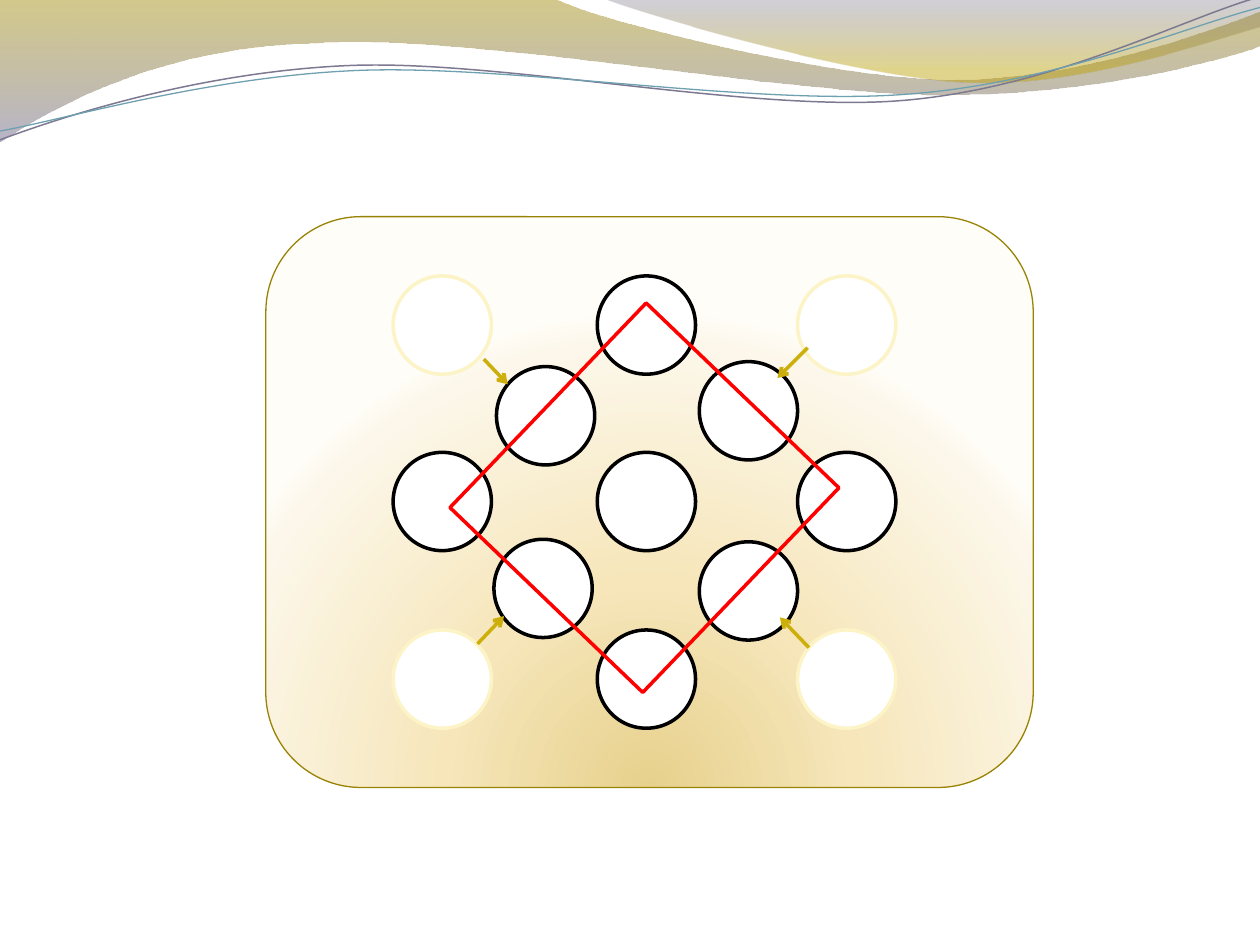
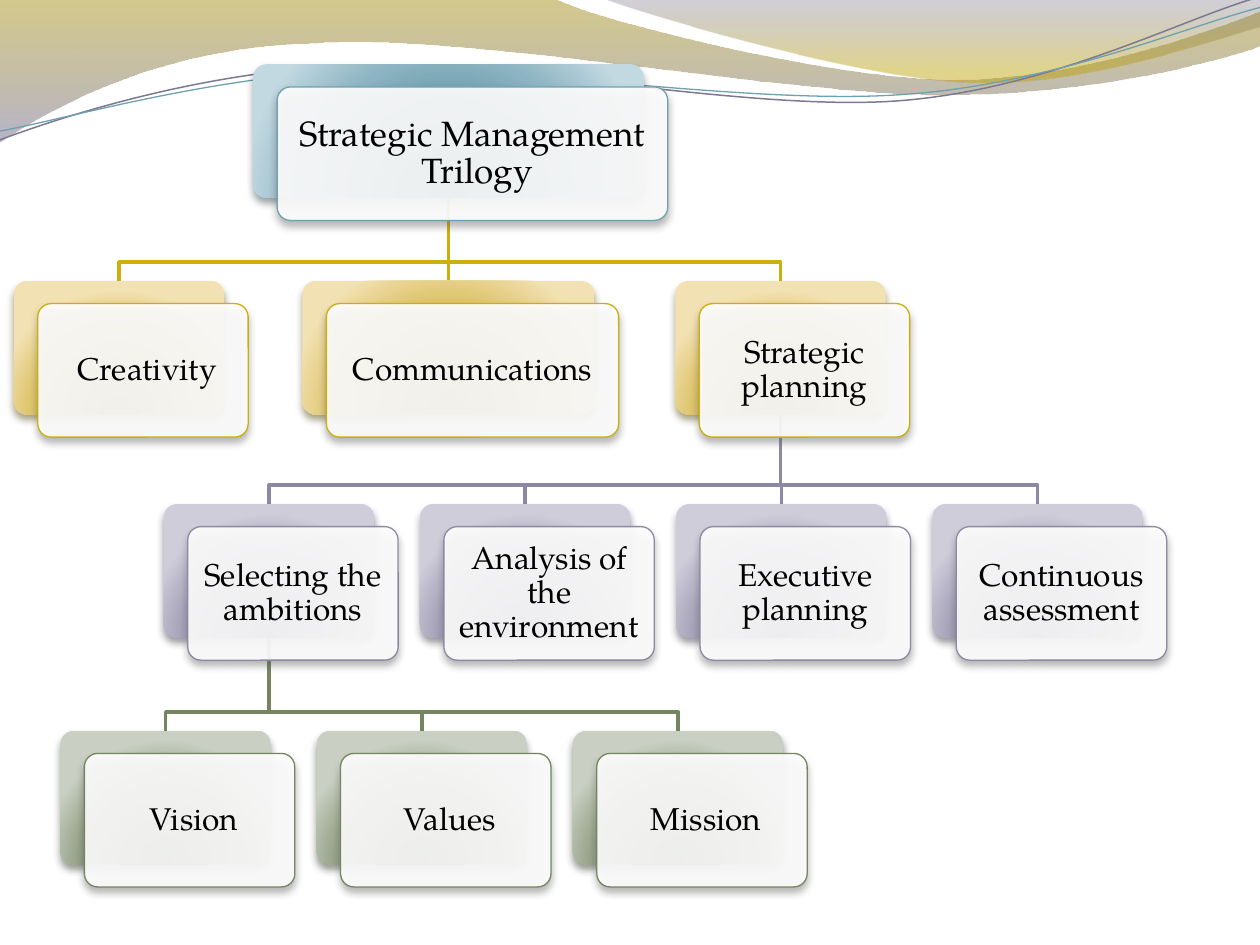
import math
import pptx
import pptx.util
import pptx.oxml
import pptx.oxml.ns
import pptx.dml.color
import pptx.enum.shapes
import pptx.enum.text
import lxml.etree

Inches = pptx.util.Inches
qn = pptx.oxml.ns.qn
ROUNDED = pptx.enum.shapes.MSO_SHAPE.ROUNDED_RECTANGLE
FONT = "TeX Gyre Pagella"
GOLD = "CCAF0A"
CARD_SHADOW = "5A5A5A"
DOWNWARD = '<a:lin ang="5400000" scaled="0"/>'
GLOW = ('<a:path path="circle"><a:fillToRect l="50000" t="130000" '
        'r="50000" b="-30000"/></a:path>')


def paint(shape, fill=None, opacity=100, stops=None, direction=GLOW,
          line=None, width=0.75, shadow=None):
    props = shape.element.spPr
    if fill:
        shape.fill.solid()
        shape.fill.fore_color.rgb = pptx.dml.color.RGBColor.from_string(fill)
        tint = props.find(qn("a:solidFill"))[0]
        lxml.etree.SubElement(tint, qn("a:alpha"), val=str(opacity * 1000))
    elif hasattr(shape, "fill"):
        shape.fill.background()
    if stops:
        marks = "".join(
            f'<a:gs pos="{place * 1000}"><a:srgbClr val="{colour}">'
            f'<a:alpha val="{alpha * 1000}"/></a:srgbClr></a:gs>'
            for place, colour, alpha in stops)
        gradient = pptx.oxml.parse_xml(
            f'<a:gradFill {pptx.oxml.ns.nsdecls("a")} rotWithShape="1">'
            f'<a:gsLst>{marks}</a:gsLst>{direction}</a:gradFill>')
        props.replace(props.find(qn("a:noFill")), gradient)
    if line:
        shape.line.color.rgb = pptx.dml.color.RGBColor.from_string(line)
        shape.line.width = pptx.util.Pt(width)
    else:
        shape.line.fill.background()
    effects = lxml.etree.SubElement(props, qn("a:effectLst"))
    if shadow:
        outer = lxml.etree.SubElement(
            effects, qn("a:outerShdw"), blurRad=str(pptx.util.Pt(4.5)),
            dist=str(pptx.util.Pt(3)), dir="5400000", rotWithShape="0")
        tint = lxml.etree.SubElement(outer, qn("a:srgbClr"), val=shadow)
        lxml.etree.SubElement(tint, qn("a:alpha"), val="48000")


def write(box, text, size=18, colour="000000", inset=0.04):
    frame = box.text_frame
    frame.word_wrap = True
    frame.vertical_anchor = pptx.enum.text.MSO_ANCHOR.MIDDLE
    frame.margin_left = frame.margin_right = Inches(inset)
    frame.margin_top = frame.margin_bottom = Inches(inset)
    para = frame.paragraphs[0]
    para.alignment = pptx.enum.text.PP_ALIGN.CENTER
    para.line_spacing = 0.9
    para._p.get_or_add_pPr().set("rtl", "1")
    span = para.add_run()
    span.text = text
    span.font.name = FONT
    span.font.size = pptx.util.Pt(size)
    span.font.color.rgb = pptx.dml.color.RGBColor.from_string(colour)


deck = pptx.Presentation()
deck.slide_width, deck.slide_height = Inches(10), Inches(7.5)
layout = deck.slide_layouts[6]
page = deck.slides.add_slide(layout)

TILT = -2.7
waves = [
    ((0, 0), [
        [(4.4, -0.01)],
        [(4.76, 0.17), (6.64, 0.63), (7.58, 0.63)],
        [(8.53, 0.63), (9.58, 0.26), (10, 0.09)],
        [(10.01, 0.36)],
        [(9.83, 0.44), (8.7, 0.76), (7.46, 0.75)],
        [(6.22, 0.75), (3.82, 0.28), (2.57, 0.34)],
        [(1.29, 0.36), (0.46, 0.83), (-0.01, 1.13)]], 0, (0, 0),
     dict(stops=[(0, "9E8700", 45), (100, "7B769C", 55)], direction=DOWNWARD)),
    ((4.79, -0.01), [
        [(5.09, 0.11), (6.82, 0.62), (7.69, 0.65)],
        [(8.56, 0.69), (9.61, 0.32), (10, 0.21)],
        [(10, 0)]], 0, (0, 0),
     dict(stops=[(0, "66627C", 30), (80, "BDA100", 45)], direction=DOWNWARD)),
    ((0, 1.11), [
        [(0.48, 0.93), (1.58, 0.57), (2.77, 0.52)],
        [(3.95, 0.47), (5.93, 0.89), (7.13, 0.8)],
        [(8.33, 0.71), (9.38, 0.15), (9.98, -0.02)]], TILT, (4.99, 0.58),
     dict(line="7C7991", width=0.85)),
    ((0, 1.04), [
        [(0.47, 0.96), (1.64, 0.61), (2.83, 0.56)],
        [(4.03, 0.51), (5.97, 0.84), (7.17, 0.75)],
        [(8.36, 0.67), (9.41, 0.21), (10, 0.06)]], TILT, (5, 0.59),
     dict(line="6EA0B0")),
]
for start, segments, tilt, (pivot_x, pivot_y), style in waves:
    cosine, sine = math.cos(math.radians(-tilt)), math.sin(math.radians(-tilt))
    outline = [
        (Inches(pivot_x + (x - pivot_x) * cosine - (y - pivot_y) * sine),
         Inches(pivot_y + (x - pivot_x) * sine + (y - pivot_y) * cosine))
        for x, y in [start] + sum(segments, [])]
    builder = page.shapes.build_freeform(*outline[0])
    builder.add_line_segments(outline[1:], close="stops" in style)
    wave = builder.convert_to_shape()
    wave.rotation = tilt
    pieces = iter(list(wave.element.iter(qn("a:lnTo"))))
    for segment in segments:
        piece = next(pieces)
        if len(segment) == 3:
            piece.addprevious(curve := lxml.etree.Element(qn("a:cubicBezTo")))
            for part in (piece, next(pieces), next(pieces)):
                curve.append(part[0])
                part.getparent().remove(part)
    paint(wave, **style)
    layout.shapes.element.append(wave.element)

panel = page.shapes.add_shape(
    ROUNDED, Inches(2.11), Inches(1.72), Inches(6.09), Inches(4.53))
paint(panel, line="998305",
      stops=[(0, "E7D18D", 100), (43, "F6E6BA", 100),
             (93, "FCF7EA", 100), (100, "FFFDF7", 100)])

columns, rows = (3.12, 4.74, 6.33), (2.19, 3.59, 5)
circles = [(left, top, "FCF4C7" if left != columns[1] and top != rows[1] else "000000")
           for top in rows for left in columns]
circles += [(left, top, "000000") for left, top in
            [(3.94, 2.91), (5.55, 2.87), (5.55, 4.3), (3.92, 4.28)]]
for left, top, colour in circles:
    circle = page.shapes.add_shape(
        pptx.enum.shapes.MSO_SHAPE.OVAL,
        Inches(left), Inches(top), Inches(0.78), Inches(0.78))
    paint(circle, fill="FFFFFF", line=colour, width=2)

for ends in [(3.84, 2.85, 4.03, 3.05), (6.41, 2.76, 6.17, 3),
             (6.42, 5.14, 6.19, 4.9), (3.79, 5.11, 4, 4.89)]:
    arrow = page.shapes.add_connector(
        pptx.enum.shapes.MSO_CONNECTOR.STRAIGHT, *map(Inches, ends))
    paint(arrow, line=GOLD, width=2)
    lxml.etree.SubElement(
        arrow.element.spPr.find(qn("a:ln")), qn("a:tailEnd"), type="arrow")

diamond = page.shapes.add_shape(
    pptx.enum.shapes.MSO_SHAPE.RECTANGLE,
    Inches(3.99), Inches(2.89), Inches(2.25), Inches(2.12))
diamond.rotation = 313.8
paint(diamond, line="FF0000", width=2)

page = deck.slides.add_slide(layout)
CARD_WIDTH, CARD_HEIGHT, PITCH = 1.67, 1.06, 6.1 / 3
SHIFT_X, SHIFT_Y, BEND = 0.19, 0.18, 0.15
levels = [
    dict(top=0.51, line="6EA0B0", shades=("26667B", "8BB3C1", "C3D9E1"),
         shadow="26383E", size=20, parent=None,
         cards=[(2.01, 3.1, "Strategic Management Trilogy ")]),
    dict(top=2.23, line=GOLD, shades=("8A7200", "DCC165", "F2E1B2"),
         shadow="493F02", size=18, parent=0,
         cards=[(0.11, CARD_WIDTH, "Creativity "), (2.4, 2.32, "Communications"),
                (5.36, CARD_WIDTH, "Strategic planning")]),
    dict(top=4, line="8D89A4", shades=("484266", "A39FB6", "CFCDDA"),
         shadow="31303A", size=18, parent=2,
         cards=[(1.3 + PITCH * place, CARD_WIDTH, text) for place, text in enumerate(
             ["Selecting the ambitions", "Analysis of the environment",
              "Executive planning", "Continuous assessment"])]),
    dict(top=5.8, line="748560", shades=("43592A", "93A085", "C9D0C3"),
         shadow="292F21", size=18, parent=0,
         cards=[(0.48 + PITCH * place, CARD_WIDTH, text)
                for place, text in enumerate(["Vision ", "Values ", "Mission "])]),
]

for upper, lower in zip(levels, levels[1:]):
    parent_left, parent_width, _ = upper["cards"][lower["parent"]]
    trunk = parent_left + parent_width / 2
    bend = lower["top"] - BEND
    for left, width, _ in lower["cards"]:
        middle = left + width / 2
        corners = [(Inches(x), Inches(y)) for x, y in [
            (trunk, upper["top"] + CARD_HEIGHT), (trunk, bend),
            (middle, bend), (middle, lower["top"])]]
        builder = page.shapes.build_freeform(*corners[0])
        builder.add_line_segments(corners[1:], close=False)
        paint(builder.convert_to_shape(), line=lower["line"], width=2)

for level in levels:
    back = dict(stops=[(place, shade, 100) for place, shade in
                       zip((0, 68, 100), level["shades"])], shadow=level["shadow"])
    front = dict(fill="FFFFFF", opacity=90, line=level["line"], shadow=CARD_SHADOW)
    for left, width, text in level["cards"]:
        for shift_x, shift_y, style in [(0, 0, back), (SHIFT_X, SHIFT_Y, front)]:
            card = page.shapes.add_shape(
                ROUNDED, Inches(left + shift_x), Inches(level["top"] + shift_y),
                Inches(width), Inches(CARD_HEIGHT))
            card.adjustments[0] = 0.1
            paint(card, **style)
        write(card, text, size=level["size"])

deck.save("out.pptx")
